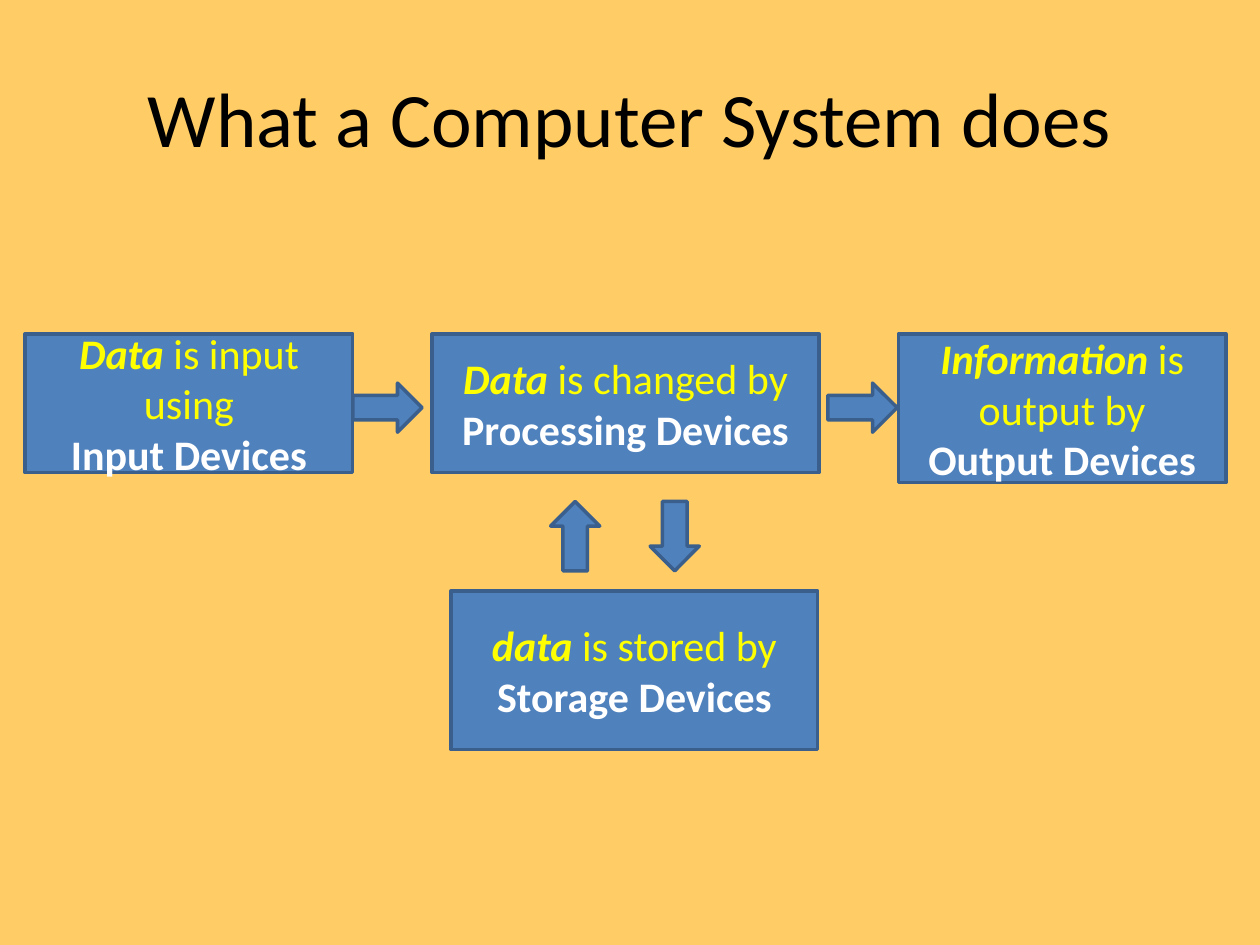
from pptx import Presentation
from pptx.dml.color import RGBColor
from pptx.enum.shapes import MSO_SHAPE
from pptx.enum.text import MSO_ANCHOR, PP_ALIGN
from pptx.util import Inches, Pt

COLOURS = {
    "background": "FFCC66",
    "title": "000000",
    "fill": "4F81BD",
    "outline": "3A5F8C",
    "action": "FFFF00",
    "device": "FFFFFF",
}
FONT = "Calibri"
CELL = Inches(0.1)
FLOW_ROW = 26.5
ARROW_SIZE = (5.5, 3.9)

STAGES = [
    ((2, FLOW_ROW, 26, 11), "Data", " is input using", "Input Devices"),
    ((34.3, FLOW_ROW, 30.7, 11), "Data", " is changed by", "Processing Devices"),
    ((35.8, 46.9, 29.1, 12.6), "data", " is stored by", "Storage Devices"),
    ((71.3, FLOW_ROW, 26, 11.8), "Information", " is output by", "Output Devices"),
]
ARROWS = [(28, 30.4, 0), (65.7, 30.4, 0), (50.8, 40.6, 90), (42.9, 40.6, 270)]


def colour(name):
    """Return the named colour."""
    return RGBColor.from_string(COLOURS[name])


def cells(*counts):
    """Turn counts of grid columns and rows into slide lengths."""
    return [round(count * CELL) for count in counts]


def format_run(run, size, colour_name, bold=False, italic=False):
    """Set the font of one run."""
    font = run.font
    font.name, font.size = FONT, Pt(size)
    font.bold, font.italic = bold, italic
    font.color.rgb = colour(colour_name)


def add_title(slide, text):
    """Add the centred slide title."""
    frame = slide.shapes.add_textbox(*cells(5, 3, 90, 12.5)).text_frame
    frame.word_wrap = True
    frame.vertical_anchor = MSO_ANCHOR.MIDDLE
    frame.text = text
    paragraph = frame.paragraphs[0]
    paragraph.alignment = PP_ALIGN.CENTER
    format_run(paragraph.runs[0], 44, "title")


def add_block(slide, kind, box):
    """Add an outlined blue shape at a grid position."""
    shape = slide.shapes.add_shape(kind, *cells(*box))
    shape.shadow.inherit = False
    shape.fill.solid()
    shape.fill.fore_color.rgb = colour("fill")
    shape.line.color.rgb = colour("outline")
    shape.line.width = Pt(2)
    return shape


def add_stage(slide, box, subject, action, device):
    """Add a stage box with its action above its kind of device."""
    frame = add_block(slide, MSO_SHAPE.RECTANGLE, box).text_frame
    frame.word_wrap = True
    frame.vertical_anchor = MSO_ANCHOR.MIDDLE
    frame.text = f"{subject}\n{device}"
    action_line, device_line = frame.paragraphs
    action_run = action_line.add_run()
    action_run.text = action
    for paragraph in frame.paragraphs:
        paragraph.alignment = PP_ALIGN.CENTER
    format_run(action_line.runs[0], 24, "action", bold=True, italic=True)
    format_run(action_run, 24, "action")
    format_run(device_line.runs[0], 24, "device", bold=True)


def add_arrow(slide, column, row, rotation):
    """Add a block arrow turned to its direction of flow."""
    arrow = add_block(slide, MSO_SHAPE.RIGHT_ARROW, (column, row, *ARROW_SIZE))
    arrow.rotation = rotation


def main():
    """Build and save the slide."""
    presentation = Presentation()
    presentation.slide_width, presentation.slide_height = cells(100, 75)
    slide = presentation.slides.add_slide(presentation.slide_layouts[6])
    slide.background.fill.solid()
    slide.background.fill.fore_color.rgb = colour("background")
    add_title(slide, "What a Computer System does")
    for stage in STAGES:
        add_stage(slide, *stage)
    for arrow in ARROWS:
        add_arrow(slide, *arrow)
    presentation.save("out.pptx")


if __name__ == "__main__":
    main()
